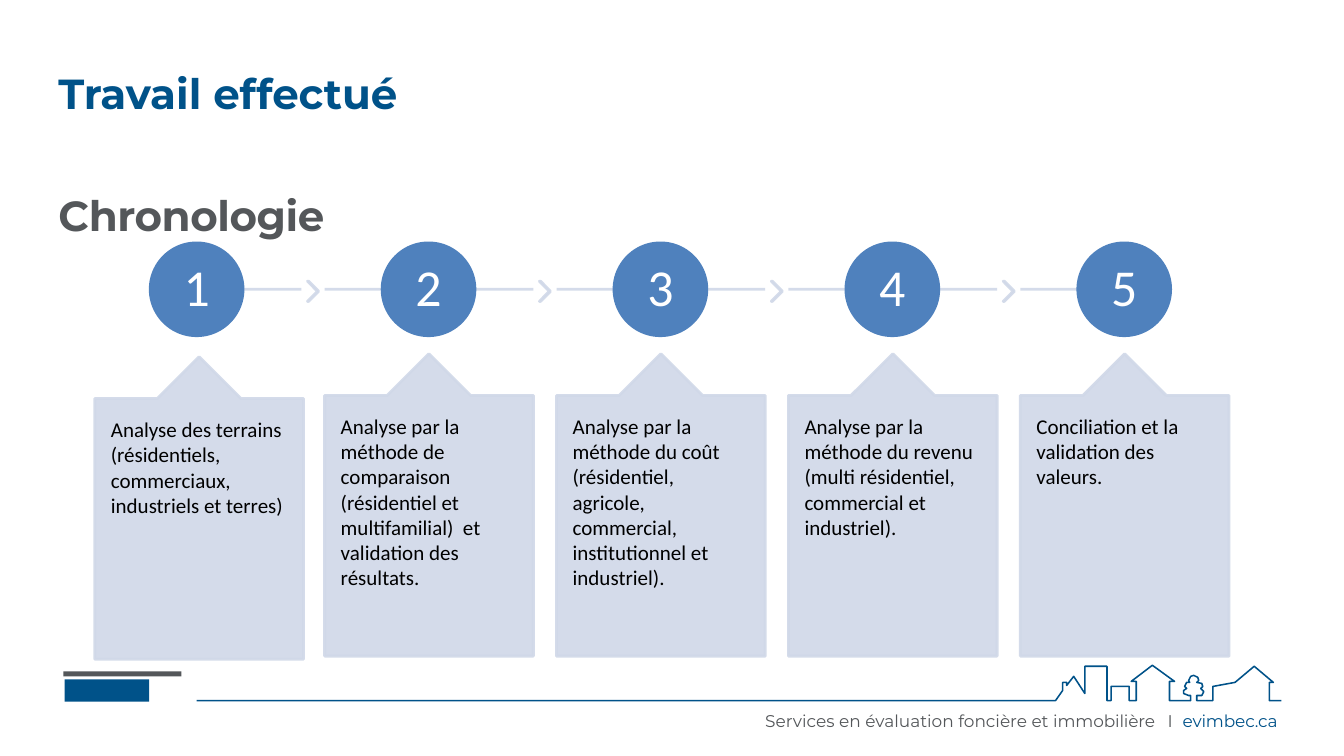
from lxml import etree
from pptx import Presentation
from pptx.dml.color import RGBColor
from pptx.enum.shapes import MSO_CONNECTOR, MSO_SHAPE
from pptx.enum.text import MSO_ANCHOR, MSO_AUTO_SIZE, PP_ALIGN
from pptx.oxml.ns import qn
from pptx.util import Pt

PX = 9144  # EMU per px, 100 px to the inch
TITLE_ONLY = 5

RECT, OVAL, CHEVRON = MSO_SHAPE.RECTANGLE, MSO_SHAPE.OVAL, MSO_SHAPE.CHEVRON
CALLOUT = MSO_SHAPE.UP_ARROW_CALLOUT
STRAIGHT = MSO_CONNECTOR.STRAIGHT
TOP, MIDDLE = MSO_ANCHOR.TOP, MSO_ANCHOR.MIDDLE
LEFT, CENTER, JUSTIFY = PP_ALIGN.LEFT, PP_ALIGN.CENTER, PP_ALIGN.JUSTIFY
NO_AUTOFIT = MSO_AUTO_SIZE.NONE

BLUE = RGBColor(0x00, 0x52, 0x89)
GREY = RGBColor(0x54, 0x57, 0x5A)
STEP_BLUE = RGBColor(0x4F, 0x81, 0xBD)
PALE = RGBColor(0xD0, 0xD8, 0xE8)
WHITE = RGBColor(0xFF, 0xFF, 0xFF)
BLACK = RGBColor(0x00, 0x00, 0x00)

HEADING = {"name": "Montserrat", "size": Pt(30), "bold": True}
FOOTER = {"name": "Montserrat", "size": Pt(12.1)}
NUMBER = {"name": "Calibri", "size": Pt(37)}
BODY = {"name": "Calibri", "size": Pt(15)}

STEPS = [
    "Analyse des terrains (résidentiels, commerciaux, industriels et terres)",
    "Analyse par la méthode de comparaison (résidentiel et multifamilial)  et "
    "validation des résultats.",
    "Analyse par la méthode du coût (résidentiel, agricole, commercial, "
    "institutionnel et industriel).",
    "Analyse par la méthode du revenu (multi résidentiel, commercial et industriel).",
    "Conciliation et la validation des valeurs.",
]
PITCH, CARD_W, CARD_H, CIRCLE = 230, 207, 300, 92

SKYLINE = [
    (195, 695), (1047, 695), (1054, 685), (1054, 677), (1058, 677), (1058, 680),
    (1065, 671), (1076, 688), (1076, 661), (1098, 661), (1098, 695), (1102, 695),
    (1102, 681), (1120, 681), (1120, 695), (1127, 695), (1127, 676), (1122, 676),
    (1143, 660), (1165, 676), (1160, 676), (1160, 695),
    # tree
    (1181, 695), (1181, 690), (1179, 690), (1174, 688), (1174, 685), (1177, 683),
    (1175, 681), (1177, 677), (1180, 677), (1179, 675), (1181, 671), (1184, 670),
    (1188, 672), (1189, 675), (1187, 677), (1192, 678), (1193, 681), (1191, 683),
    (1194, 686), (1192, 690), (1187, 690), (1187, 695),
    # last house
    (1203, 695), (1203, 681), (1225, 677), (1244, 661), (1263, 677), (1259, 677),
    (1259, 695), (1271, 695),
]


class Deck:
    def __init__(self, width, height):
        self.prs = Presentation()
        self.prs.slide_width, self.prs.slide_height = width * PX, height * PX
        self.slide = self.prs.slides.add_slide(self.prs.slide_layouts[TITLE_ONLY])
        self.shapes = self.slide.shapes

    def fill_text(self, sp, runs, style, align=LEFT, anchor=TOP, insets=(0, 0)):
        """Write one paragraph of (text, colour, spacing in 1/100 pt) runs."""
        tf = sp.text_frame
        dx, dy = (n * PX for n in insets)
        frame = {"word_wrap": True, "auto_size": NO_AUTOFIT, "vertical_anchor": anchor,
                 "margin_left": dx, "margin_right": dx,
                 "margin_top": dy, "margin_bottom": dy}
        for key, value in frame.items():
            setattr(tf, key, value)
        p = tf.paragraphs[0]
        p.alignment = align
        for text, colour, spacing in runs:
            r = p.add_run()
            r.text = text
            for key, value in style.items():
                setattr(r.font, key, value)
            r.font.color.rgb = colour
            if spacing:
                r._r.get_or_add_rPr().set("spc", str(spacing))
        return p

    def title(self, box, text):
        sp = self.shapes.title
        sp.left, sp.top, sp.width, sp.height = (n * PX for n in box)
        self.fill_text(sp, [(text, BLUE, 0)], HEADING)

    def text(self, box, runs, style, **layout):
        sp = self.shapes.add_textbox(*(n * PX for n in box))
        return self.fill_text(sp, runs, style, **layout)

    def shape(self, kind, box, colour, adjust=(), line=True, alpha=None):
        sp = self.shapes.add_shape(kind, *(n * PX for n in box))
        sp.shadow.inherit = False
        for i, value in enumerate(adjust):
            sp.adjustments[i] = value
        sp.fill.solid()
        sp.fill.fore_color.rgb = colour
        if line:
            sp.line.color.rgb = colour
            sp.line.width = Pt(2)
        else:
            sp.line.fill.background()
        if alpha:
            self.set_alpha(sp, alpha)
        return sp

    def set_alpha(self, sp, percent):
        for clr in sp._element.spPr.iter(qn("a:srgbClr")):
            etree.SubElement(clr, qn("a:alpha")).set("val", str(percent * 1000))

    def line(self, x1, x2, y, colour, alpha):
        c = self.shapes.add_connector(STRAIGHT, x1 * PX, y * PX, x2 * PX, y * PX)
        c.line.color.rgb = colour
        c.line.width = Pt(2)
        self.set_alpha(c, alpha)
        etree.SubElement(c._element.spPr, qn("a:effectLst"))

    def outline(self, points, colour):
        builder = self.shapes.build_freeform(*points[0], scale=PX)
        builder.add_line_segments(points[1:], close=False)
        sp = builder.convert_to_shape()
        sp.shadow.inherit = False
        sp.fill.background()
        sp.line.color.rgb = colour
        sp.line.width = Pt(1.1)

    def step(self, i, text):
        """Draw the numbered circle, its line and its card."""
        first, last = i == 0, i == len(STEPS) - 1
        x = 92 + i * PITCH
        center = x + CARD_W // 2
        self.line(center if first else x, center if last else x + CARD_W, 287, PALE, 90)
        if not last:
            self.shape(CHEVRON, (x + 213, 279, 11, 20), PALE, [0.9], alpha=90)
        circle = self.shape(OVAL, (x + 57, 241, CIRCLE, CIRCLE), STEP_BLUE)
        p = self.fill_text(circle, [(str(i + 1), WHITE, 0)], NUMBER,
                           align=CENTER, anchor=MIDDLE, insets=(4, 4))
        p.line_spacing = 0.9
        card_box = (x + 2, 354, CARD_W, CARD_H) if first else (x, 351, CARD_W, CARD_H)
        card = self.shape(CALLOUT, card_box, PALE, [0.5, 0.2, 0.2, 1], alpha=90)
        self.fill_text(card, [(text, BLACK, 0)], BODY, insets=(16, 18))


def main():
    deck = Deck(1333, 750)
    deck.shape(RECT, (64, 674, 84, 22), BLUE, line=False)
    deck.shape(RECT, (63, 666, 117, 5), GREY, line=False)
    deck.outline(SKYLINE, BLUE)
    deck.title((58, 67, 995, 101), "Travail effectué")
    deck.text((58, 188, 1217, 60), [("Chronologie", GREY, -30)], HEADING, align=JUSTIFY)

    p = deck.text((1158, 705, 130, 20),
                  [("I\t", GREY, -30), ("evimbec.ca", BLUE, -10)], FOOTER)
    p.line_spacing = Pt(14.3)
    tabs = etree.SubElement(p._p.get_or_add_pPr(), qn("a:tabLst"))
    tab = etree.SubElement(tabs, qn("a:tab"))
    tab.set("pos", str(15 * PX))
    tab.set("algn", "l")
    p = deck.text((759, 705, 396, 20),
                  [("Services en évaluation foncière et ", GREY, 0),
                   ("immobilière", GREY, -10)], FOOTER)
    p.line_spacing = Pt(14.2)

    for i, text in enumerate(STEPS):
        deck.step(i, text)
    deck.prs.save("out.pptx")


if __name__ == "__main__":
    main()
